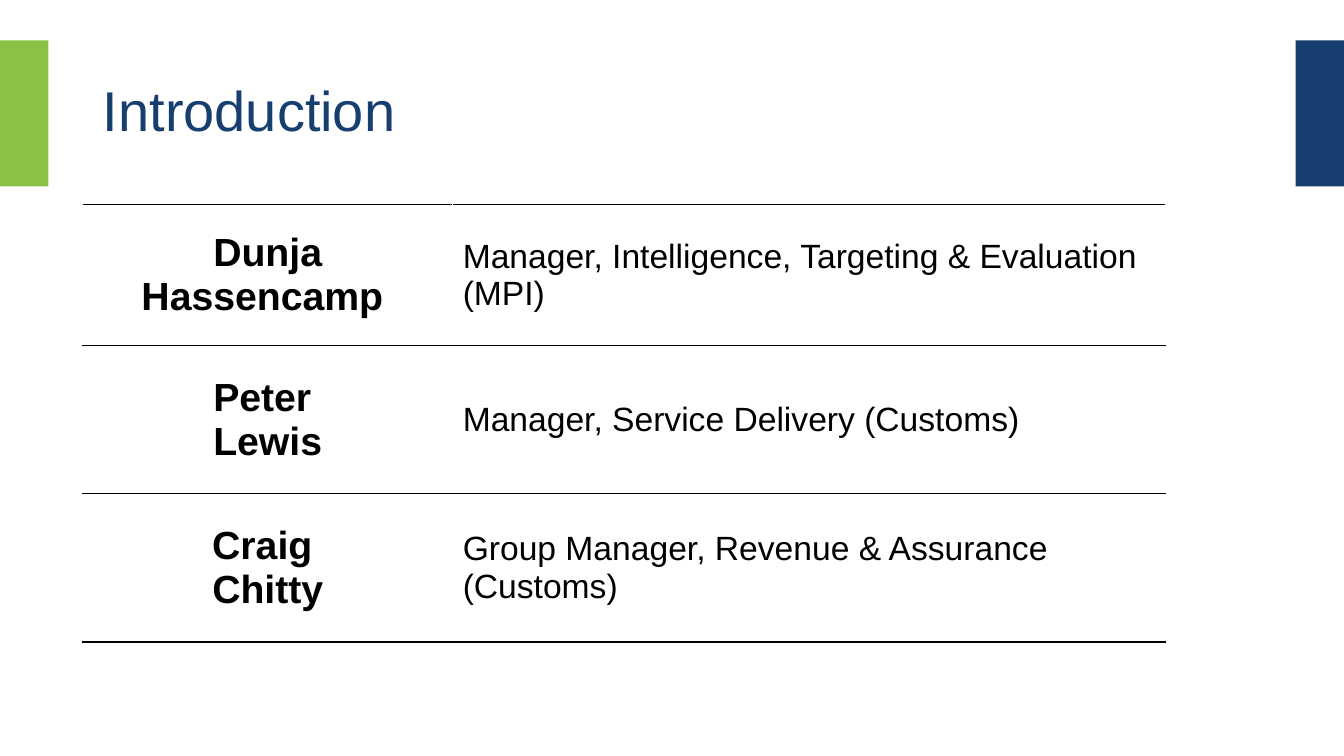
from dataclasses import dataclass

from lxml.etree import SubElement
from pptx import Presentation
from pptx.dml.color import RGBColor
from pptx.enum.shapes import MSO_SHAPE
from pptx.enum.text import MSO_ANCHOR, PP_ALIGN
from pptx.oxml.ns import qn
from pptx.util import Emu, Pt

PX = 9144  # 100 px to the inch
NAVY, GREEN, BLACK, WHITE = "163E6F", "8BC145", "000000", "FFFFFF"
BAR_TOP, BAR_W, BAR_H = 40, 48, 145
SLIDE_W, SLIDE_H = 1333, 750


@dataclass
class Bar:
    left: int
    color: str


@dataclass
class Person:
    name: list[str]
    role: str
    height: int


BARS = [Bar(0, GREEN), Bar(SLIDE_W - BAR_W, NAVY)]
PEOPLE = [
    Person(["Dunja Hassencamp "], "Manager, Intelligence, Targeting & Evaluation (MPI)", 140),
    Person(["Peter ", "Lewis"], "Manager, Service Delivery (Customs)", 147),
    Person(["Craig ", "Chitty"], "Group Manager, Revenue & Assurance (Customs)", 147),
]
COLUMNS = [367, 707]
BORDERS = {"a:lnL": WHITE, "a:lnR": WHITE, "a:lnT": BLACK, "a:lnB": BLACK}


def px(n: int) -> Emu:
    return Emu(n * PX)


def rgb(color: str) -> RGBColor:
    return RGBColor.from_string(color)


def write(tf, lines: list[str], *, size: int, color: str = BLACK, bold: bool = False,
          align=PP_ALIGN.LEFT, spacing: float = 1.0) -> None:
    for i, line in enumerate(lines):
        p = tf.paragraphs[0] if i == 0 else tf.add_paragraph()
        p.alignment = align
        p.line_spacing = spacing
        r = p.add_run()
        r.text = line
        r.font.name, r.font.size, r.font.bold = "Arial", Pt(size), bold
        r.font.color.rgb = rgb(color)


def add_bar(s, bar: Bar) -> None:
    sp = s.shapes.add_shape(MSO_SHAPE.RECTANGLE, px(bar.left), px(BAR_TOP), px(BAR_W), px(BAR_H))
    sp.shadow.inherit = False
    sp.fill.solid()
    sp.fill.fore_color.rgb = rgb(bar.color)
    sp.line.fill.background()


def style_cell(cell) -> None:
    cell.vertical_anchor = MSO_ANCHOR.MIDDLE
    tc_pr = cell._tc.get_or_add_tcPr()
    # Borders come before the fill in the cell properties
    for tag, color in BORDERS.items():
        ln = SubElement(tc_pr, qn(tag), w=str(Pt(1)))
        fill = SubElement(ln, qn("a:solidFill"))
        SubElement(fill, qn("a:srgbClr"), val=color)
    cell.fill.background()


def add_people(s, people: list[Person]) -> None:
    height = sum(person.height for person in people)
    frame = s.shapes.add_table(len(people), len(COLUMNS), px(82), px(203),
                               px(sum(COLUMNS)), px(height))
    table = frame.table
    table.first_row = table.horz_banding = False
    for column, width in zip(table.columns, COLUMNS):
        column.width = px(width)
    for row, person in zip(table.rows, people):
        row.height = px(person.height)
        name, role = row.cells
        write(name.text_frame, person.name, size=28, bold=True, align=PP_ALIGN.CENTER)
        write(role.text_frame, [person.role], size=24)
        for cell in row.cells:
            style_cell(cell)


def main() -> None:
    prs = Presentation()
    prs.slide_width, prs.slide_height = px(SLIDE_W), px(SLIDE_H)
    s = prs.slides.add_slide(prs.slide_layouts[5])

    # Side bars
    for bar in BARS:
        add_bar(s, bar)

    # Title
    title = s.shapes.title
    title.left, title.top, title.width, title.height = px(92), px(BAR_TOP), px(968), px(BAR_H)
    title.text_frame.vertical_anchor = MSO_ANCHOR.MIDDLE
    write(title.text_frame, ["Introduction"], size=40, color=NAVY, spacing=0.9)

    # People and their roles
    add_people(s, PEOPLE)
    prs.save("out.pptx")


if __name__ == "__main__":
    main()
